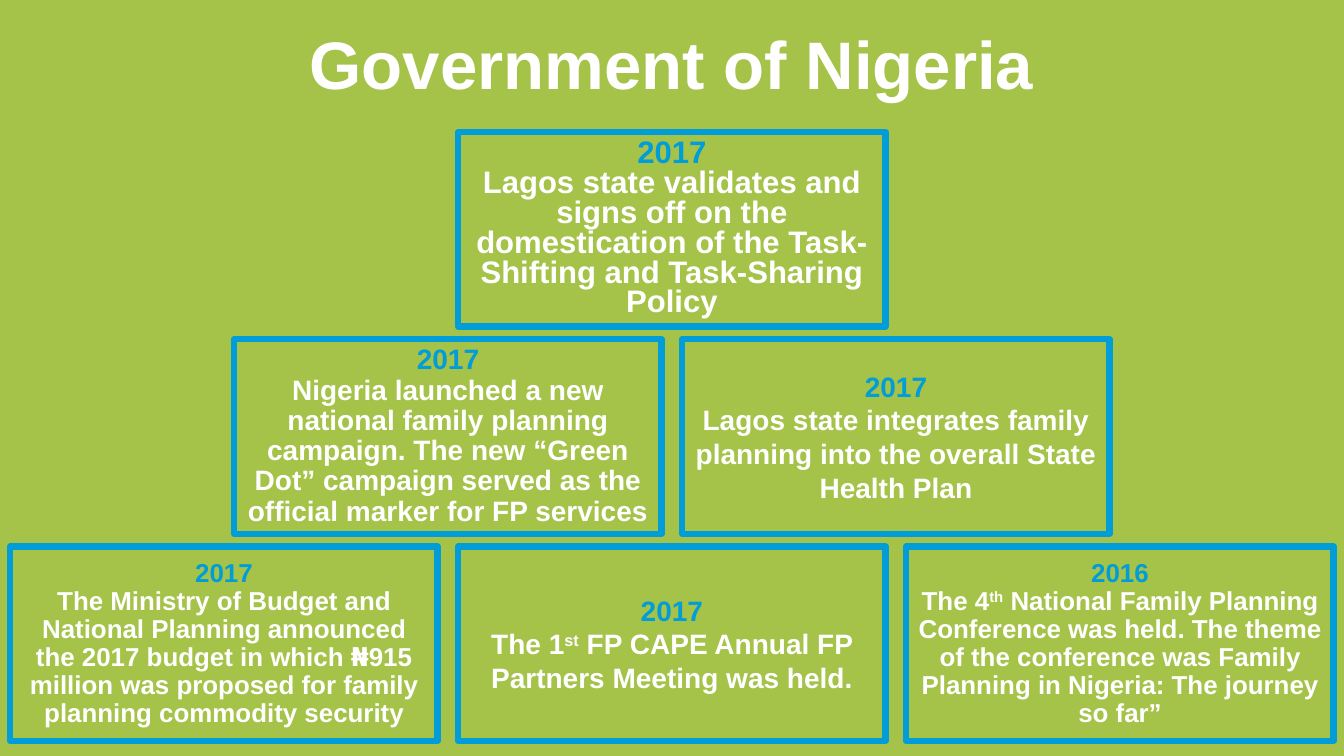
from dataclasses import dataclass

from pptx import Presentation
from pptx.dml.color import RGBColor
from pptx.enum import shapes, text
from pptx.util import Pt

COLOURS = {"green": "A5C249", "blue": "009DD9", "white": "FFFFFF"}
FONT = "Arial"

SLIDE_WIDTH, SLIDE_HEIGHT = 960, 540
BOX_WIDTH, BOX_HEIGHT = 305.3, 139
COLUMN_PITCH, ROW_PITCH = 320, 148
PYRAMID_TOP = 94.3


@dataclass(frozen=True)
class Phrase:
    wording: str
    superscript: bool = False
    typeface: str | None = None


@dataclass(frozen=True)
class Milestone:
    year: str
    phrases: tuple[Phrase, ...]
    size: float = 20
    line_spacing: float = 1.0


PYRAMID = [
    [
        Milestone("2017", (Phrase(
            "Lagos state validates and signs off on the domestication of the "
            "Task-Shifting and Task-Sharing Policy"),), 22.2, 0.8),
    ],
    [
        Milestone("2017", (Phrase(
            "Nigeria launched a new national family planning campaign. The new "
            "“Green Dot” campaign served as the official marker for FP services"),),
            20, 0.9),
        Milestone("2017", (Phrase(
            "Lagos state integrates family planning into the overall State "
            "Health Plan"),)),
    ],
    [
        Milestone("2017", (
            Phrase("The Ministry of Budget and National Planning announced the "
                   "2017 budget in which "),
            Phrase("₦", typeface="DejaVu Sans"),
            Phrase("915 million was proposed for family planning commodity security"),
        ), 18.5, 0.9),
        Milestone("2017", (
            Phrase("The 1"),
            Phrase("st", superscript=True),
            Phrase(" FP CAPE Annual FP Partners Meeting was held."),
        )),
        Milestone("2016", (
            Phrase("The 4"),
            Phrase("th", superscript=True),
            Phrase(" National Family Planning Conference was held. The theme of the "
                   "conference was Family Planning in Nigeria: The journey so far”"),
        ), 18.5, 0.9),
    ],
]


def colour(name: str) -> RGBColor:
    return RGBColor.from_string(COLOURS[name])


def format_paragraph(paragraph, size: float, colour_name: str,
                     line_spacing: float = 1.0) -> None:
    paragraph.alignment = text.PP_ALIGN.CENTER
    paragraph.line_spacing = line_spacing
    font = paragraph.font
    font.name, font.size, font.bold = FONT, Pt(size), True
    font.color.rgb = colour(colour_name)


def add_title(slide, wording: str) -> None:
    title = slide.shapes.title
    title.left, title.top, title.width, title.height = (
        Pt(211), Pt(12.2), Pt(538), Pt(65.5))
    frame = title.text_frame
    frame.text = wording
    frame.word_wrap = True
    frame.auto_size = text.MSO_AUTO_SIZE.NONE
    frame.vertical_anchor = text.MSO_ANCHOR.TOP
    format_paragraph(frame.paragraphs[0], 48, "white")


def add_milestone(slide, milestone: Milestone, left: float, top: float) -> None:
    box = slide.shapes.add_shape(shapes.MSO_SHAPE.RECTANGLE, Pt(left), Pt(top),
                                 Pt(BOX_WIDTH), Pt(BOX_HEIGHT))
    box.shadow.inherit = False
    box.fill.solid()
    box.fill.fore_color.rgb = colour("green")
    box.line.color.rgb = colour("blue")
    box.line.width = Pt(4.5)

    frame = box.text_frame
    frame.word_wrap = True
    frame.vertical_anchor = text.MSO_ANCHOR.MIDDLE
    year = frame.paragraphs[0]
    year.text = milestone.year
    format_paragraph(year, milestone.size, "blue", milestone.line_spacing)

    event = frame.add_paragraph()
    format_paragraph(event, milestone.size, "white", milestone.line_spacing)
    for phrase in milestone.phrases:
        run = event.add_run()
        run.text = phrase.wording
        if phrase.typeface:
            run.font.name = phrase.typeface
        if phrase.superscript:
            run._r.get_or_add_rPr().set("baseline", "30000")


def add_pyramid(slide) -> None:
    """Centre each row of milestones on the slide."""
    for row, milestones in enumerate(PYRAMID):
        row_width = BOX_WIDTH + (len(milestones) - 1) * COLUMN_PITCH
        row_left = (SLIDE_WIDTH - row_width) / 2
        for column, milestone in enumerate(milestones):
            add_milestone(slide, milestone, row_left + column * COLUMN_PITCH,
                          PYRAMID_TOP + row * ROW_PITCH)


def main() -> None:
    presentation = Presentation()
    presentation.slide_width = Pt(SLIDE_WIDTH)
    presentation.slide_height = Pt(SLIDE_HEIGHT)
    slide = presentation.slides.add_slide(presentation.slide_layouts[5])
    slide.background.fill.solid()
    slide.background.fill.fore_color.rgb = colour("green")
    add_title(slide, "Government of Nigeria")
    add_pyramid(slide)
    presentation.save("out.pptx")


if __name__ == "__main__":
    main()
